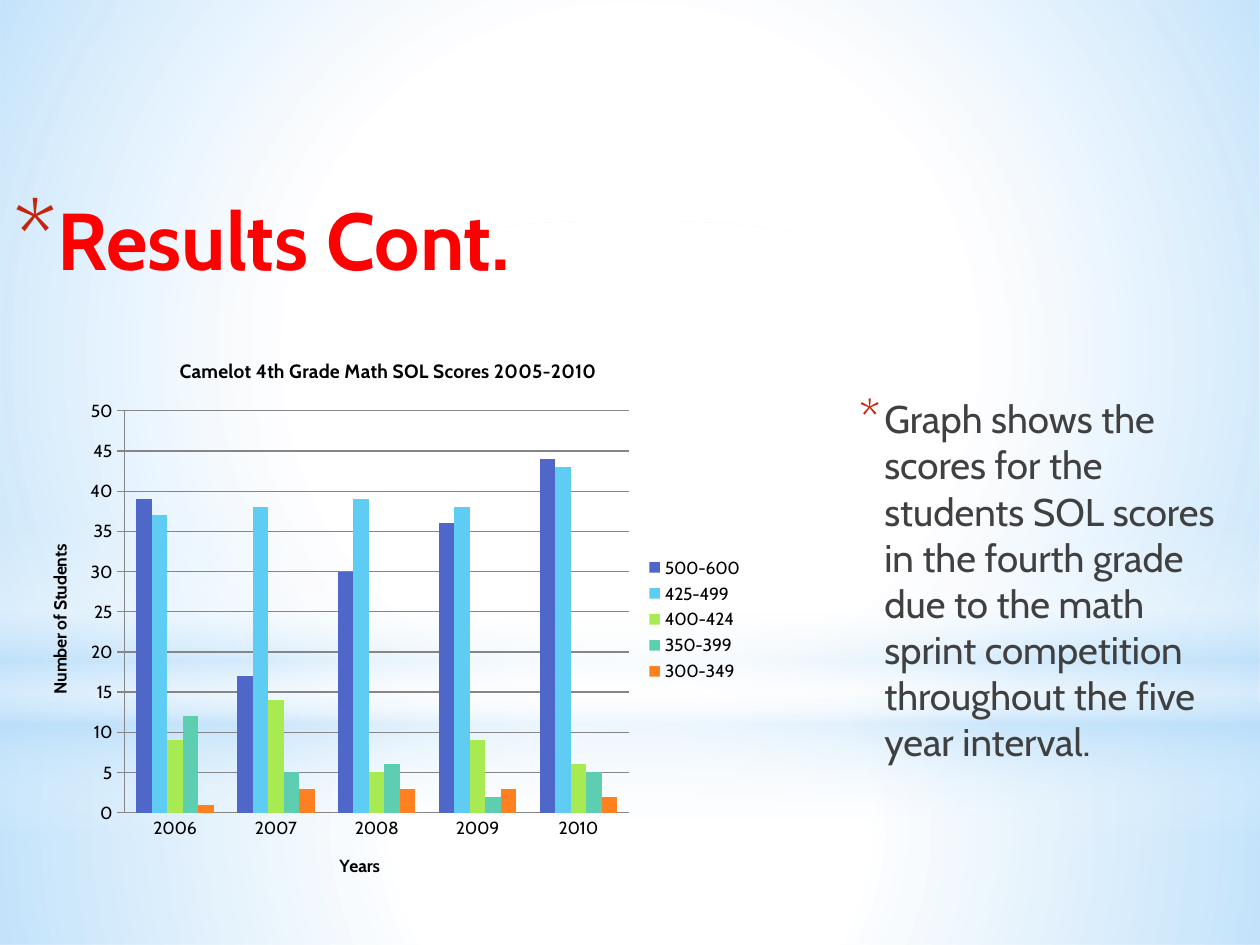
from pptx import Presentation
from pptx.chart.data import CategoryChartData
from pptx.dml.color import RGBColor
from pptx.enum.chart import XL_CHART_TYPE, XL_LEGEND_POSITION, XL_TICK_MARK
from pptx.enum.shapes import MSO_SHAPE
from pptx.enum.text import MSO_ANCHOR, PP_ALIGN
from pptx.oxml import parse_xml
from pptx.oxml.ns import nsdecls
from pptx.util import Emu, Pt

SCALE = 914400 / 126
FONT = "Cabin"
COLORS = {
    "white": "FFFFFF", "sky": "B4DCFA", "title": "FF0000", "body": "404040",
    "bullet": "C3260C", "black": "000000", "grid": "868686",
}
YEARS = ["2006", "2007", "2008", "2009", "2010"]
SCORES = {
    "500-600": ("4E67C8", [39, 17, 30, 36, 44]),
    "425-499": ("5ECCF3", [37, 38, 39, 38, 43]),
    "400-424": ("A7EA52", [9, 14, 5, 9, 6]),
    "350-399": ("5DCEAF", [12, 5, 6, 2, 5]),
    "300-349": ("FF8021", [1, 3, 3, 3, 2]),
}
CIRCLE = ('<a:path path="circle"><a:fillToRect l="50000" t="50000" '
          'r="50000" b="50000"/></a:path>')
DOWNWARD = '<a:lin ang="5400000" scaled="0"/>'


def px(length):
    """Turn pixels into EMU."""
    return Emu(round(length * SCALE))


def rgb(name):
    """Look up a named colour."""
    return RGBColor.from_string(COLORS[name])


def write(para, text, size, color="black", bold=False):
    """Add a formatted span of text to a paragraph."""
    span = para.add_run()
    span.text = text
    span.font.name = FONT
    span.font.size = Pt(size)
    span.font.bold = bold
    span.font.color.rgb = rgb(color)


class SlideBuilder:
    """Hold the style and the current page, and draw each kind of element."""

    def __init__(self, page):
        """Start on a page with a plain background."""
        self.page = page
        page.background.fill.solid()
        page.background.fill.fore_color.rgb = rgb("white")

    def glow(self, left, top, width, height, stops, shade=CIRCLE, kind=MSO_SHAPE.RECTANGLE):
        """Draw a shape with a translucent gradient of (position, colour, opacity) stops."""
        shape = self.page.shapes.add_shape(kind, px(left), px(top), px(width), px(height))
        shape.shadow.inherit = False
        shape.line.fill.background()
        shape.fill.background()
        marks = "".join(
            f'<a:gs pos="{position * 1000}"><a:srgbClr val="{COLORS[color]}">'
            f'<a:alpha val="{opacity * 1000}"/></a:srgbClr></a:gs>'
            for position, color, opacity in stops)
        gradient = parse_xml(f'<a:gradFill {nsdecls("a")} rotWithShape="1">'
                             f'<a:gsLst>{marks}</a:gsLst>{shade}</a:gradFill>')
        properties = shape.element.spPr
        properties.replace(properties.find("{*}noFill"), gradient)

    def bullet_text(self, left, top, width, height, text, margin, hang, bullet_size, **style):
        """Draw a text box with one starred paragraph."""
        box = self.page.shapes.add_textbox(px(left), px(top), px(width), px(height))
        frame = box.text_frame
        frame.word_wrap = True
        frame.vertical_anchor = MSO_ANCHOR.TOP
        para = frame.paragraphs[0]
        para.alignment = PP_ALIGN.LEFT
        write(para, text, **style)
        properties = para._p.get_or_add_pPr()
        properties.set("marL", str(px(margin)))
        properties.set("indent", str(px(-hang)))
        for bullet in (
            f'<a:buClr {nsdecls("a")}><a:srgbClr val="{COLORS["bullet"]}"/></a:buClr>',
            f'<a:buSzPct {nsdecls("a")} val="{bullet_size * 1000}"/>',
            f'<a:buFont {nsdecls("a")} typeface="{FONT}"/>',
            f'<a:buChar {nsdecls("a")} char="*"/>',
        ):
            properties.append(parse_xml(bullet))

    def column_chart(self, left, top, width, height, title, plot_area):
        """Draw the clustered columns of scores by year."""
        data = CategoryChartData()
        data.categories = YEARS
        for name, (_, values) in SCORES.items():
            data.add_series(name, values)
        chart = self.page.shapes.add_chart(
            XL_CHART_TYPE.COLUMN_CLUSTERED, px(left), px(top), px(width), px(height), data).chart
        chart.font.name = FONT
        chart.font.size = Pt(10)
        chart.font.color.rgb = rgb("black")
        chart.has_title = True
        write(chart.chart_title.text_frame.paragraphs[0], title, 11, bold=True)
        chart.has_legend = True
        chart.legend.position = XL_LEGEND_POSITION.RIGHT
        chart.legend.include_in_layout = False
        plot = chart.plots[0]
        plot.gap_width = 150
        plot.overlap = 0
        plot.vary_by_categories = False
        for series, (color, _) in zip(plot.series, SCORES.values()):
            series.format.fill.solid()
            series.format.fill.fore_color.rgb = RGBColor.from_string(color)
        axes = ((chart.category_axis, "Years", XL_TICK_MARK.NONE),
                (chart.value_axis, "Number of Students", XL_TICK_MARK.OUTSIDE))
        for axis, label, tick in axes:
            axis.major_tick_mark = tick
            axis.minor_tick_mark = XL_TICK_MARK.NONE
            axis.format.line.color.rgb = rgb("grid")
            write(axis.axis_title.text_frame.paragraphs[0], label, 10, bold=True)
        scale = chart.value_axis
        scale.minimum_scale, scale.maximum_scale, scale.major_unit = 0, 50, 5
        scale.has_major_gridlines = True
        scale.major_gridlines.format.line.color.rgb = rgb("grid")
        self.place_plot(chart, plot_area, (left, top, width, height))

    def place_plot(self, chart, plot_area, frame):
        """Fix the inner plot area, given in page pixels."""
        left, top, width, height = frame
        x, y, w, h = plot_area
        parts = {"x": (x - left) / width, "y": (y - top) / height,
                 "w": w / width, "h": h / height}
        sizes = "".join(f'<c:{key} val="{value:.3f}"/>' for key, value in parts.items())
        layout = parse_xml(
            f'<c:layout {nsdecls("c")}><c:manualLayout><c:layoutTarget val="inner"/>'
            f'<c:xMode val="edge"/><c:yMode val="edge"/>{sizes}</c:manualLayout></c:layout>')
        area = chart.element.find(".//{*}plotArea")
        for old in area.findall("{*}layout"):
            area.remove(old)
        area.insert(0, layout)


def main():
    """Build the results slide."""
    deck = Presentation()
    deck.slide_width, deck.slide_height = px(1260), px(945)
    builder = SlideBuilder(deck.slides.add_slide(deck.slide_layouts[6]))
    builder.glow(0, 703, 1260, 242, [(0, "white", 91), (37, "white", 76), (100, "sky", 79)])
    builder.glow(0, 0, 1260, 703, [(0, "white", 89), (48, "white", 62), (100, "sky", 79)])
    builder.glow(0, 519, 1260, 315,
                 [(0, "white", 0), (29, "white", 30), (45, "sky", 40),
                  (55, "white", 26), (65, "sky", 60), (100, "white", 0)], shade=DOWNWARD)
    builder.glow(0, 221, 1260, 703, [(0, "white", 100), (56, "white", 0)], kind=MSO_SHAPE.OVAL)
    builder.bullet_text(1, 184, 897, 158, "Results Cont.", margin=44, hang=44,
                        bullet_size=128, size=46, color="title", bold=True)
    builder.bullet_text(840, 389, 416, 479,
                        "Graph shows the scores for the students SOL scores in the fourth grade "
                        "due to the math sprint competition throughout the five year interval.",
                        margin=32, hang=25, bullet_size=130, size=22, color="body")
    builder.column_chart(21, 336, 735, 567, "Camelot 4th Grade Math SOL Scores 2005-2010",
                         plot_area=(125, 411, 504, 402))
    deck.save("out.pptx")


if __name__ == "__main__":
    main()
